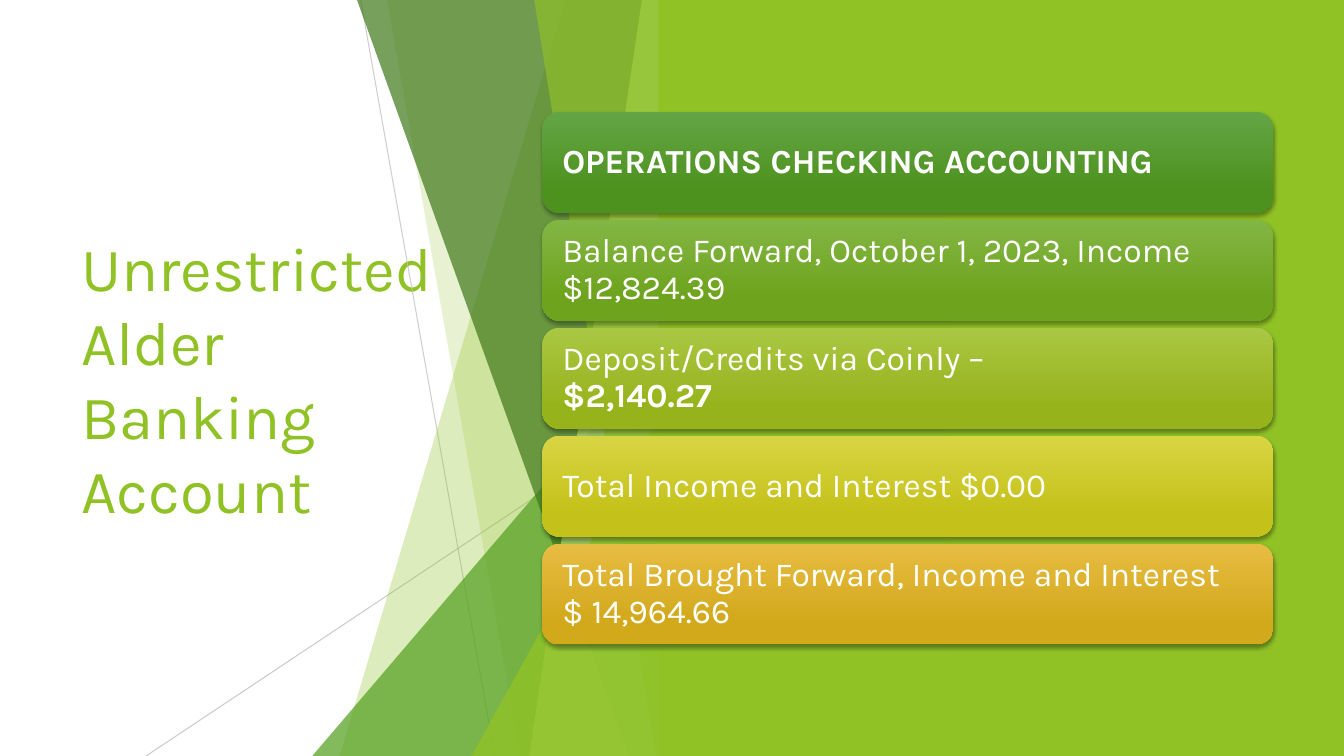
from dataclasses import dataclass

from lxml.etree import SubElement
from pptx import Presentation
from pptx.dml.color import RGBColor
from pptx.enum.shapes import MSO_CONNECTOR, MSO_SHAPE
from pptx.enum.text import MSO_ANCHOR, PP_ALIGN
from pptx.oxml.ns import qn
from pptx.util import Cm, Pt


@dataclass(frozen=True)
class Theme:
    font: str = "Karla"
    title: int = 44
    body: int = 24
    lime: str = "90C226"
    green: str = "54A021"
    dark: str = "3F7819"
    pale: str = "C0E474"
    grey: str = "BFBFBF"
    white: str = "FFFFFF"
    black: str = "000000"
    cards: tuple = (
        ("63A545", "4D921E"),
        ("82B644", "6EA31D"),
        ("AAC744", "97B31C"),
        ("D8D543", "C4C11A"),
        ("E7BC43", "D2A91B"),
    )


def fade(shape, alpha):
    for node in shape.element.iter(qn("a:srgbClr")):
        SubElement(node, qn("a:alpha"), val=str(alpha * 1000))


def style(para, size, tint):
    para.alignment = PP_ALIGN.LEFT
    para.font.name = theme.font
    para.font.size = Pt(size)
    para.font.color.rgb = RGBColor.from_string(tint)


theme = Theme()
deck = Presentation()
deck.slide_width, deck.slide_height = Cm(33.87), Cm(19.05)
slide = deck.slides.add_slide(deck.slide_layouts[6])
shapes = slide.shapes
foot = 19.05
edge = 16.92

title = shapes.add_textbox(Cm(1.8), Cm(3.84), Cm(9.86), Cm(11.38))
frame = title.text_frame
frame.word_wrap = True
frame.vertical_anchor = MSO_ANCHOR.MIDDLE
frame.text = "Unrestricted Alder Banking Account"
style(frame.paragraphs[0], theme.title, theme.lime)

rays = [(9.09, 0, 12.47, 75), (edge, 10.24, 3.68, 80)]
for left, top, base, alpha in rays:
    ray = shapes.add_connector(
        MSO_CONNECTOR.STRAIGHT, Cm(left), Cm(top), Cm(base), Cm(foot)
    )
    ray.line.width = Pt(0.75)
    ray.line.color.rgb = RGBColor.from_string(theme.grey)
    SubElement(ray.element.spPr, qn("a:effectLst"))
    fade(ray, alpha)

facets = [
    (14.25, -0.02, 8.56, theme.lime, 30),
    (9.75, -0.02, 13.11, theme.lime, 20),
    (edge, 8.46, 7.87, theme.green, 72),
    (8.99, -0.02, 15.85, theme.dark, 70),
    (16.18, -0.02, 13.34, theme.pale, 70),
    (13.46, -0.02, 16.54, theme.lime, 65),
    (edge, 9.98, 11.88, theme.lime, 80),
]
for left, top, base, tint, alpha in facets:
    if left == edge:
        facet = shapes.add_shape(
            MSO_SHAPE.ISOSCELES_TRIANGLE,
            Cm(base), Cm(top), Cm(edge - base), Cm(foot - top),
        )
        facet.adjustments[0] = 1
    else:
        path = shapes.build_freeform(Cm(left), Cm(top))
        points = [(edge, top), (edge, foot), (base, foot)]
        path.add_line_segments([(Cm(x), Cm(y)) for x, y in points])
        facet = path.convert_to_shape()
    facet.shadow.inherit = False
    facet.fill.solid()
    facet.fill.fore_color.rgb = RGBColor.from_string(tint)
    facet.line.fill.background()
    fade(facet, alpha)

panel = shapes.add_shape(MSO_SHAPE.RECTANGLE, Cm(16.6), 0, Cm(17.27), Cm(foot))
panel.shadow.inherit = False
panel.fill.solid()
panel.fill.fore_color.rgb = RGBColor.from_string(theme.lime)
panel.line.fill.background()

rows = [
    [("OPERATIONS CHECKING ACCOUNTING", True)],
    [("Balance Forward, October 1, 2023, Income", False), ("$12,824.39", False)],
    [("Deposit/Credits via Coinly –", False), ("$2,140.27", True)],
    [("Total Income and Interest $0.00", False)],
    [("Total Brought Forward, Income and Interest", False), ("$ 14,964.66", False)],
]
for index, (row, tints) in enumerate(zip(rows, theme.cards)):
    card = shapes.add_shape(
        MSO_SHAPE.ROUNDED_RECTANGLE,
        Cm(13.67), Cm(2.82 + 2.72 * index), Cm(18.42), Cm(2.54),
    )
    card.fill.gradient()
    card.fill.gradient_angle = 270
    for stop, spot, tint in zip(card.fill.gradient_stops, (0, 0.78), tints):
        stop.position = spot
        stop.color.rgb = RGBColor.from_string(tint)
    card.line.fill.background()
    card.shadow.inherit = False
    glow = SubElement(
        card.element.spPr.find(qn("a:effectLst")), qn("a:outerShdw"),
        blurRad=str(Pt(3)), dist=str(Pt(2)), dir="5400000", rotWithShape="0",
    )
    shade = SubElement(glow, qn("a:srgbClr"), val=theme.black)
    SubElement(shade, qn("a:alpha"), val="35000")

    frame = card.text_frame
    frame.word_wrap = True
    frame.vertical_anchor = MSO_ANCHOR.MIDDLE
    frame.margin_left = frame.margin_right = Cm(0.38)
    frame.margin_top = frame.margin_bottom = Cm(0.25)
    para = frame.paragraphs[0]
    para.line_spacing = 0.9
    style(para, theme.body, theme.white)
    for place, (words, bold) in enumerate(row):
        if place:
            para.add_line_break()
        run = para.add_run()
        run.text = words
        run.font.bold = bold

deck.save("out.pptx")
